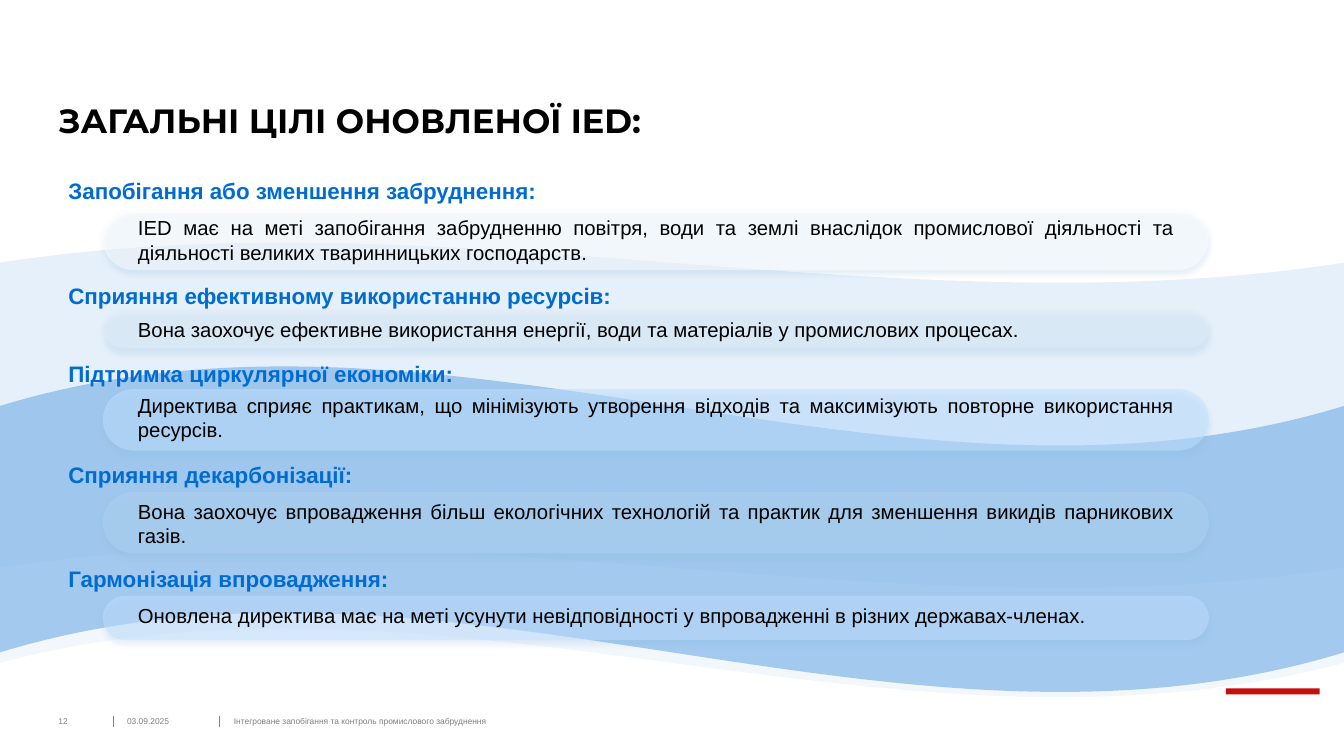
from lxml import etree
from pptx import Presentation
from pptx.dml.color import RGBColor
from pptx.enum.shapes import MSO_CONNECTOR, MSO_SHAPE
from pptx.enum.text import MSO_ANCHOR, MSO_AUTO_SIZE, PP_ALIGN
from pptx.oxml import parse_xml
from pptx.oxml.ns import nsdecls, qn
from pptx.util import Inches, Pt

RECT, ROUND, WAVE = MSO_SHAPE.RECTANGLE, MSO_SHAPE.ROUNDED_RECTANGLE, MSO_SHAPE.WAVE
STRAIGHT = MSO_CONNECTOR.STRAIGHT
TOP, MIDDLE, BOTTOM = MSO_ANCHOR.TOP, MSO_ANCHOR.MIDDLE, MSO_ANCHOR.BOTTOM
LEFT, JUSTIFY = PP_ALIGN.LEFT, PP_ALIGN.JUSTIFY
GROW, FIXED = MSO_AUTO_SIZE.SHAPE_TO_FIT_TEXT, MSO_AUTO_SIZE.NONE

BLACK = RGBColor(0, 0, 0)
WHITE = RGBColor(255, 255, 255)
GRAY = RGBColor(0x7F, 0x7F, 0x7F)
RED = RGBColor(0xC8, 0x0F, 0x0F)
HEADING_BLUE = RGBColor(0x00, 0x6C, 0xD2)
PALE = RGBColor(0xE5, 0xF0, 0xFA)
WAVE_BLUE = RGBColor(0x80, 0xB5, 0xE8)
CARD_SKY = RGBColor(0xC3, 0xE1, 0xFF)
CARD_BLUE = RGBColor(0xB1, 0xD2, 0xF1)
CARD_PALE = RGBColor(0xE2, 0xED, 0xF7)

SLIDE_W, SLIDE_H = 13.33, 7.5
MARGIN, CARD_X, TEXT_X = 0.58, 1.02, 1.27
CARD_W, TEXT_W, HEADING_H = 10.97, 10.47, 0.37
FOOTER_Y = 7.1

TITLE = "ЗАГАЛЬНІ ЦІЛІ ОНОВЛЕНОЇ IED:"
# heading, heading top, heading width, text, text top, text height, card top, card height, card colour
GOALS = [
    ("Запобігання або зменшення забруднення:", 1.71, 4.91,
     "IED має на меті запобігання забрудненню повітря, води та землі внаслідок "
     "промислової діяльності та діяльності великих тваринницьких господарств.",
     2.09, 0.61, 2.07, 0.61, WHITE),
    ("Сприяння ефективному використанню ресурсів:", 2.75, 5.9,
     "Вона заохочує ефективне використання енергії, води та матеріалів у "
     "промислових процесах.",
     3.1, 0.35, 3.07, 0.38, CARD_PALE),
    ("Підтримка циркулярної економіки:", 3.52, 5.9,
     "Директива сприяє практикам, що мінімізують утворення відходів та "
     "максимізують повторне використання ресурсів.",
     3.85, 0.61, 3.86, 0.61, CARD_SKY),
    ("Сприяння декарбонізації:", 4.53, 5.9,
     "Вона заохочує впровадження більш екологічних технологій та практик для "
     "зменшення викидів парникових газів.",
     4.9, 0.59, 4.88, 0.61, CARD_BLUE),
    ("Гармонізація впровадження:", 5.56, 5.9,
     "Оновлена директива має на меті усунути невідповідності у впровадженні в "
     "різних державах-членах.",
     5.93, 0.35, 5.91, 0.44, CARD_SKY),
]
WAVES = [
    (2.4, 3.44, 0.06, PALE, 100),
    (3.56, 3.37, 0.105, PALE, 49),
    (3.62, 3.26, 0.125, WAVE_BLUE, 69),
]
FOOTER = [
    ("12", MARGIN, 0.51),
    ("03.09.2025", 1.26, 0.79),
    ("Інтегроване запобігання та контроль промислового забруднення", 2.32, 7.48),
]
DIVIDERS = [1.13, 2.18]


def add_box(s, kind, x, y, w, h, color, opacity=100, adjust=None):
    sp = s.shapes.add_shape(kind, Inches(x), Inches(y), Inches(w), Inches(h))
    sp.shadow.inherit = False
    sp.fill.solid()
    sp.fill.fore_color.rgb = color
    sp.line.fill.background()
    if adjust is not None:
        sp.adjustments[0] = adjust
    if opacity < 100:
        rgb = sp.fill._xPr.find(qn("a:solidFill"))[0]
        etree.SubElement(rgb, qn("a:alpha"), val=str(opacity * 1000))
    return sp


def add_soft_shadow(sp):
    effects = sp._element.spPr.find(qn("a:effectLst"))
    effects.append(parse_xml(
        f'<a:outerShdw {nsdecls("a")} blurRad="{Pt(4)}" dist="{Pt(3)}" dir="5400000" '
        'algn="t" rotWithShape="0"><a:srgbClr val="85B3DD">'
        '<a:alpha val="40000"/></a:srgbClr></a:outerShdw>'))


def write(sp, x, y, w, h, text, size, color, font="Arial", bold=False,
          align=LEFT, anchor=TOP, inset=(0.1, 0.05), fit=GROW):
    sp.left, sp.top, sp.width, sp.height = (Inches(v) for v in (x, y, w, h))
    tf = sp.text_frame
    tf.word_wrap = True
    tf.auto_size = fit
    tf.vertical_anchor = anchor
    tf.margin_left = tf.margin_right = Inches(inset[0])
    tf.margin_top = tf.margin_bottom = Inches(inset[1])
    p = tf.paragraphs[0]
    p.text = text
    p.alignment = align
    p.font.name, p.font.size, p.font.bold = font, Pt(size), bold
    p.font.color.rgb = color
    return p


def add_text(s, *args, **style):
    return write(s.shapes.add_textbox(0, 0, 0, 0), *args, **style)


def main():
    prs = Presentation()
    prs.slide_width, prs.slide_height = Inches(SLIDE_W), Inches(SLIDE_H)
    s = prs.slides.add_slide(prs.slide_layouts[5])

    p = write(s.shapes.title, MARGIN, 0.4, 8.03, 1, TITLE, 24, BLACK, font="Montserrat",
              bold=True, anchor=BOTTOM, inset=(0, 0), fit=FIXED)
    p.line_spacing = 0.9

    for x in DIVIDERS:
        line = s.shapes.add_connector(STRAIGHT, Inches(x), Inches(FOOTER_Y),
                                      Inches(x), Inches(FOOTER_Y + 0.11))
        line.line.color.rgb = GRAY
        line.line.width = Pt(0.75)
        etree.SubElement(line._element.spPr, qn("a:effectLst"))
    add_box(s, RECT, 12.16, 6.83, 0.93, 0.06, RED)

    for y, h, bend, color, opacity in WAVES:
        add_box(s, WAVE, 0, y, SLIDE_W, h, color, opacity, bend)

    for heading, head_y, head_w, text, text_y, text_h, card_y, card_h, color in GOALS:
        add_soft_shadow(add_box(s, ROUND, CARD_X, card_y, CARD_W, card_h, color, 48, 0.5))
        add_text(s, MARGIN, head_y, head_w, HEADING_H, heading, 16, HEADING_BLUE, bold=True)
        add_text(s, TEXT_X, text_y, TEXT_W, text_h, text, 14.5, BLACK, align=JUSTIFY)

    for text, x, w in FOOTER:
        add_text(s, x, FOOTER_Y, w, 0.1, text, 6, GRAY, anchor=MIDDLE, inset=(0, 0))

    prs.save("out.pptx")


if __name__ == "__main__":
    main()
